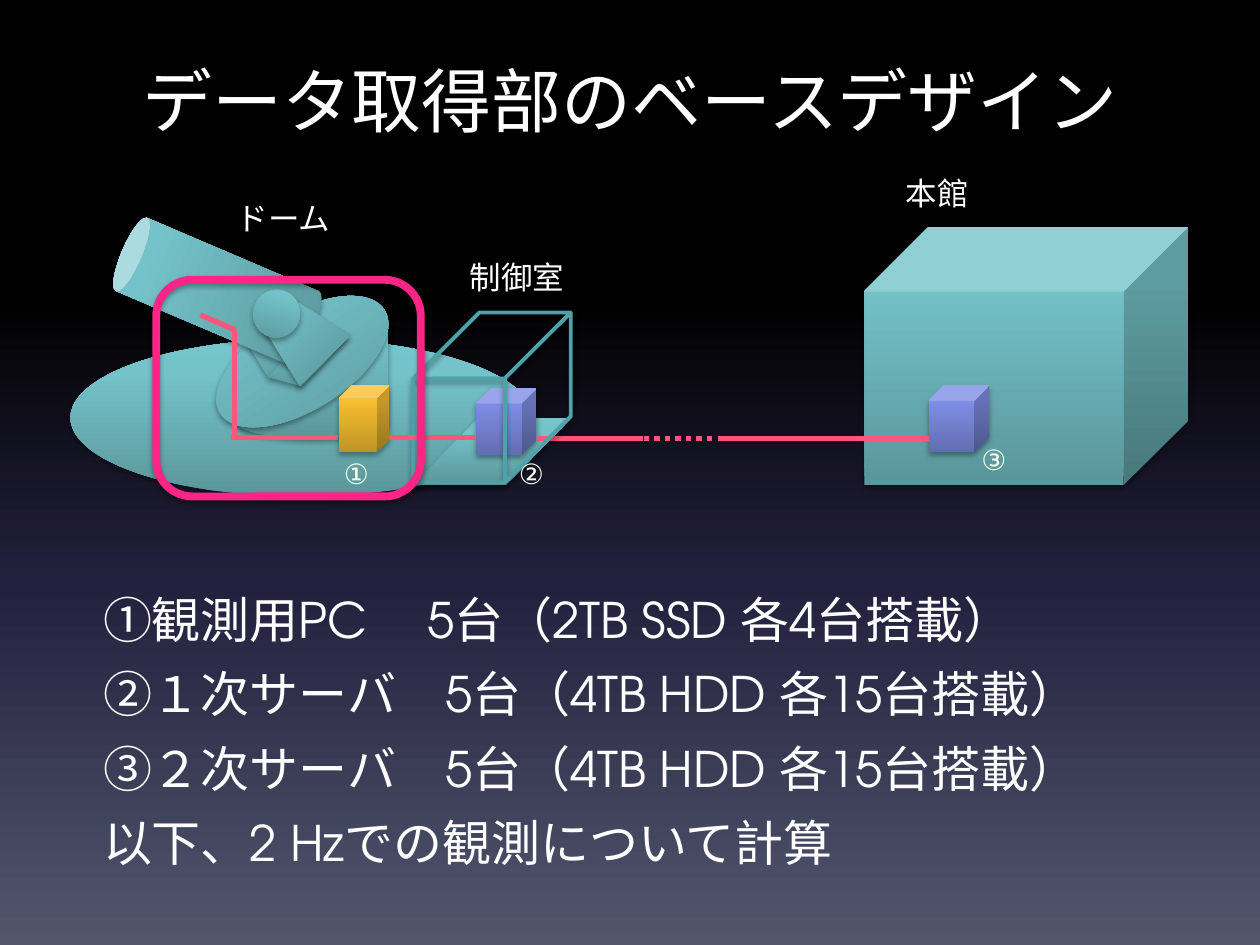
import lxml.etree
import pptx
import pptx.dml.color
import pptx.enum.dml
import pptx.enum.shapes
import pptx.enum.text
import pptx.oxml.ns
import pptx.util

Inches = pptx.util.Inches
Pt = pptx.util.Pt
SHAPE = pptx.enum.shapes.MSO_SHAPE
ALIGN = pptx.enum.text.PP_ALIGN
qn = pptx.oxml.ns.qn

FONT = "TeX Gyre Adventor"
COLORS = {"text": "FFFFFF", "number": "F9FFEE", "cable": "FF5579",
          "room": "4EA2A9", "highlight": "FF2587", "shadow": "000000"}
GRADIENTS = {
    "sky": [(0, "000000"), (31, "000000"), (62, "24213E"), (100, "51566D")],
    "teal": [(0, "5A969B"), (80, "75C3CA"), (100, "74C6CC")],
    "gold": [(0, "BF9426"), (80, "F8C031"), (100, "FDC32D")],
    "violet": [(0, "626EB1"), (80, "808FE6"), (100, "7E8EE9")],
}


class SlideBuilder:
    def __init__(self, slide):
        self.slide = slide

    def color(self, name):
        return pptx.dml.color.RGBColor.from_string(COLORS[name])

    def child(self, parent, tag, **attributes):
        values = {key: str(value) for key, value in attributes.items()}
        return lxml.etree.SubElement(parent, qn(tag), values)

    def gradient(self, fill, owner, name, angle):
        fill.gradient()
        gradient = next(owner.iter(qn("a:gradFill")))
        stops = gradient.find(qn("a:gsLst"))
        for stop in list(stops):
            stops.remove(stop)
        for position, value in GRADIENTS[name]:
            stop = self.child(stops, "a:gs", pos=position * 1000)
            self.child(stop, "a:srgbClr", val=value)
        gradient.find(qn("a:lin")).set("ang", str(angle * 60000))

    def background(self, name):
        self.gradient(self.slide.background.fill, self.slide.element, name, 90)

    def shadow(self, shape):
        shape.shadow.inherit = False
        effects = shape.element.spPr.find(qn("a:effectLst"))
        outer = self.child(effects, "a:outerShdw", blurRad=Pt(3.1), dist=Pt(1.8),
                           dir=90 * 60000, rotWithShape=0)
        tint = self.child(outer, "a:srgbClr", val=COLORS["shadow"])
        self.child(tint, "a:alpha", val=35000)

    def preset(self, kind, box, adjustment=None, rotation=0):
        shape = self.slide.shapes.add_shape(kind, *map(Inches, box))
        shape.rotation = rotation
        if adjustment is not None:
            shape.adjustments[0] = adjustment
        self.shadow(shape)
        return shape

    def solid(self, kind, box, gradient="teal", adjustment=None, rotation=0):
        shape = self.preset(kind, box, adjustment, rotation)
        self.gradient(shape.fill, shape.element.spPr, gradient, 270)
        shape.line.fill.background()

    def outline(self, kind, box, color, width, adjustment=None):
        shape = self.preset(kind, box, adjustment)
        shape.fill.background()
        shape.line.color.rgb = self.color(color)
        shape.line.width = Pt(width)

    def cable(self, start, end, dotted=False):
        line = self.slide.shapes.add_connector(
            pptx.enum.shapes.MSO_CONNECTOR.STRAIGHT, *map(Inches, start + end))
        line.line.color.rgb = self.color("cable")
        line.line.width = Pt(3)
        if dotted:
            line.line.dash_style = pptx.enum.dml.MSO_LINE.ROUND_DOT
        self.child(line.element.spPr, "a:effectLst")

    def run(self, paragraph, text, size, color="text"):
        run = paragraph.add_run()
        run.text = text
        run.font.name = FONT
        run.font.size = Pt(size)
        run.font.color.rgb = self.color(color)

    def title(self, text, box):
        title = self.slide.shapes.title
        title.left, title.top, title.width, title.height = map(Inches, box)
        paragraph = title.text_frame.paragraphs[0]
        paragraph.alignment = ALIGN.CENTER
        self.run(paragraph, text, 40)

    def label(self, text, box, size, color="text"):
        frame = self.slide.shapes.add_textbox(*map(Inches, box)).text_frame
        frame.word_wrap = False
        frame.auto_size = pptx.enum.text.MSO_AUTO_SIZE.SHAPE_TO_FIT_TEXT
        self.run(frame.paragraphs[0], text, size, color)

    def body(self, lines, box):
        frame = self.slide.shapes.add_textbox(*map(Inches, box)).text_frame
        frame.word_wrap = True
        for index, text in enumerate(lines):
            paragraph = frame.add_paragraph() if index else frame.paragraphs[0]
            paragraph.line_spacing = 1.1
            paragraph.space_before = Pt(5.6)
            self.run(paragraph, text, 28)


def main():
    deck = pptx.Presentation()
    deck.slide_width, deck.slide_height = Inches(10), Inches(7.5)
    page = SlideBuilder(deck.slides.add_slide(deck.slide_layouts[5]))
    page.background("sky")
    page.title("データ取得部のベースデザイン", (0.5, 0.38, 9, 0.82))
    page.body([
        "①観測用PC\u3000 5台（2TB SSD 各4台搭載）".replace("\u3000", "　"),
        "②１次サーバ　5台（4TB HDD 各15台搭載）",
        "③２次サーバ　5台（4TB HDD 各15台搭載）",
        "以下、2 Hzでの観測について計算",
    ], (0.72, 4.58, 9, 2.61))

    page.solid(SHAPE.OVAL, (0.56, 2.69, 3.67, 1.25))
    page.solid(SHAPE.PARALLELOGRAM, (3.28, 3.32, 1.25, 0.53), adjustment=0.97)
    page.solid(SHAPE.CAN, (1.88, 2.48, 1.2, 1))
    page.solid(SHAPE.OVAL, (1.63, 2.49, 1.54, 0.76), rotation=327.8)
    page.solid(SHAPE.TRAPEZOID, (1.83, 2.27, 0.57, 0.61), rotation=315)
    page.solid(SHAPE.PARALLELOGRAM, (2.18, 2.59, 0.54, 0.48),
               adjustment=0.55, rotation=15)
    page.solid(SHAPE.CAN, (1.41, 1.49, 0.63, 1.64), rotation=293.1)
    page.solid(SHAPE.TRAPEZOID, (2.08, 2.34, 0.57, 0.61), rotation=315)
    page.solid(SHAPE.OVAL, (2.01, 2.3, 0.37, 0.38), rotation=15)

    page.solid(SHAPE.CUBE, (6.86, 1.8, 2.57, 2.05))
    page.solid(SHAPE.CUBE, (2.69, 3.06, 0.4, 0.53), "gold")
    page.solid(SHAPE.CUBE, (3.78, 3.08, 0.48, 0.53), "violet")
    page.solid(SHAPE.CUBE, (7.37, 3.06, 0.48, 0.53), "violet")

    page.cable((4.26, 3.48), (5.1, 3.48))
    page.cable((5.7, 3.48), (7.37, 3.48))
    page.cable((4.86, 3.48), (5.84, 3.48), dotted=True)
    page.outline(SHAPE.CUBE, (3.28, 2.48, 1.25, 1.35), "room", 2.25, 0.42)
    page.cable((3.09, 3.47), (3.77, 3.47))
    page.cable((1.59, 2.5), (1.87, 2.62))
    page.cable((1.86, 2.62), (1.86, 3.47))
    page.cable((1.83, 3.47), (2.68, 3.47))

    for number, left, top in (("①", 2.63, 3.57), ("②", 4.02, 3.57), ("③", 7.69, 3.46)):
        page.label(number, (left, top, 0.48, 0.42), 16, "number")
    for place, left, top, width in (("ドーム", 1.78, 1.53, 0.96),
                                    ("本館", 7.09, 1.33, 0.71),
                                    ("制御室", 3.63, 2, 0.96)):
        page.label(place, (left, top, width, 0.4), 18)
    page.outline(SHAPE.ROUNDED_RECTANGLE, (1.24, 2.22, 2.1, 1.72), "highlight", 4.5)
    deck.save("out.pptx")


if __name__ == "__main__":
    main()
